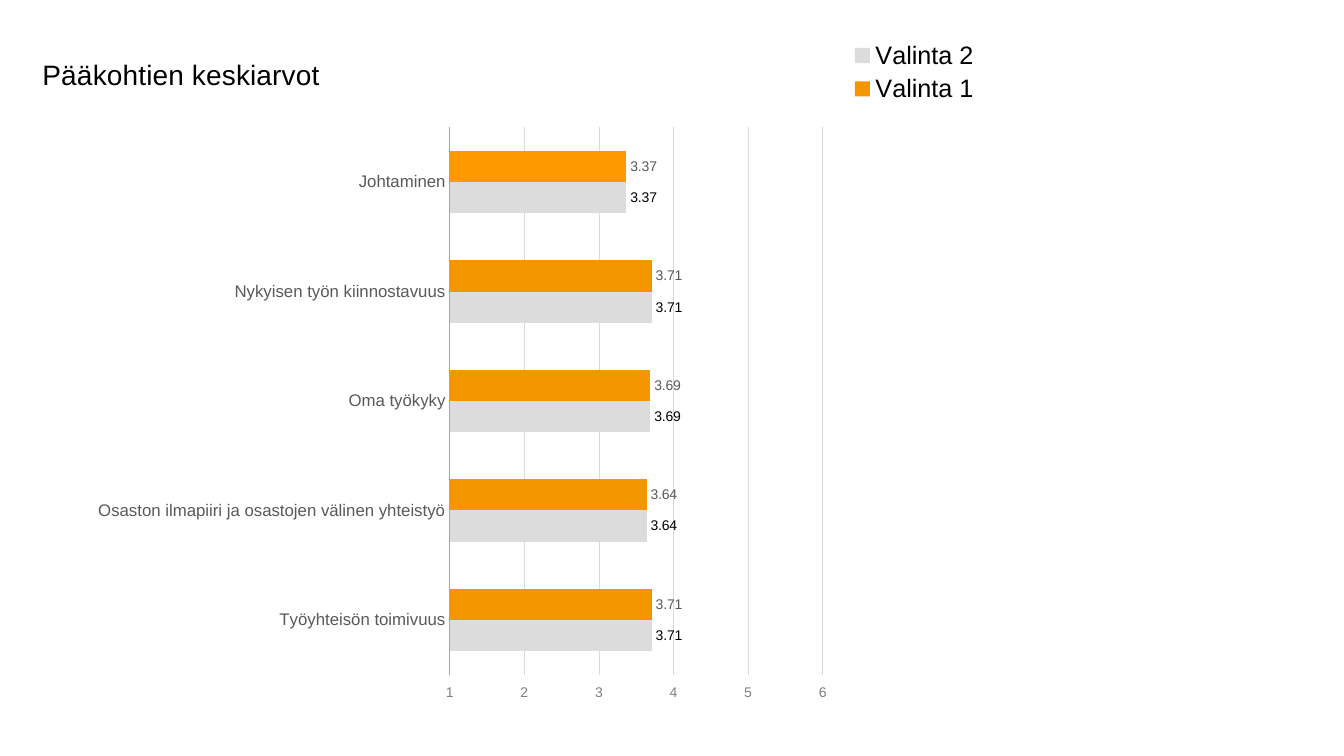
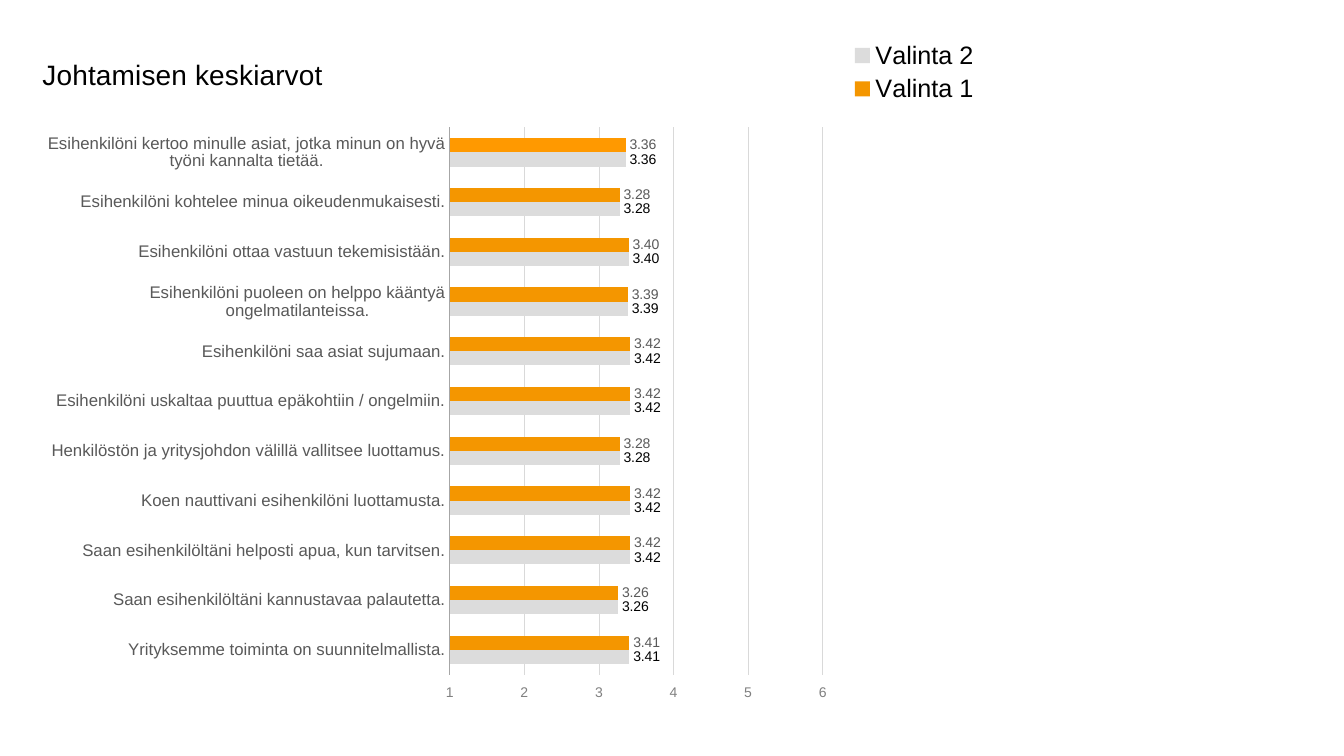
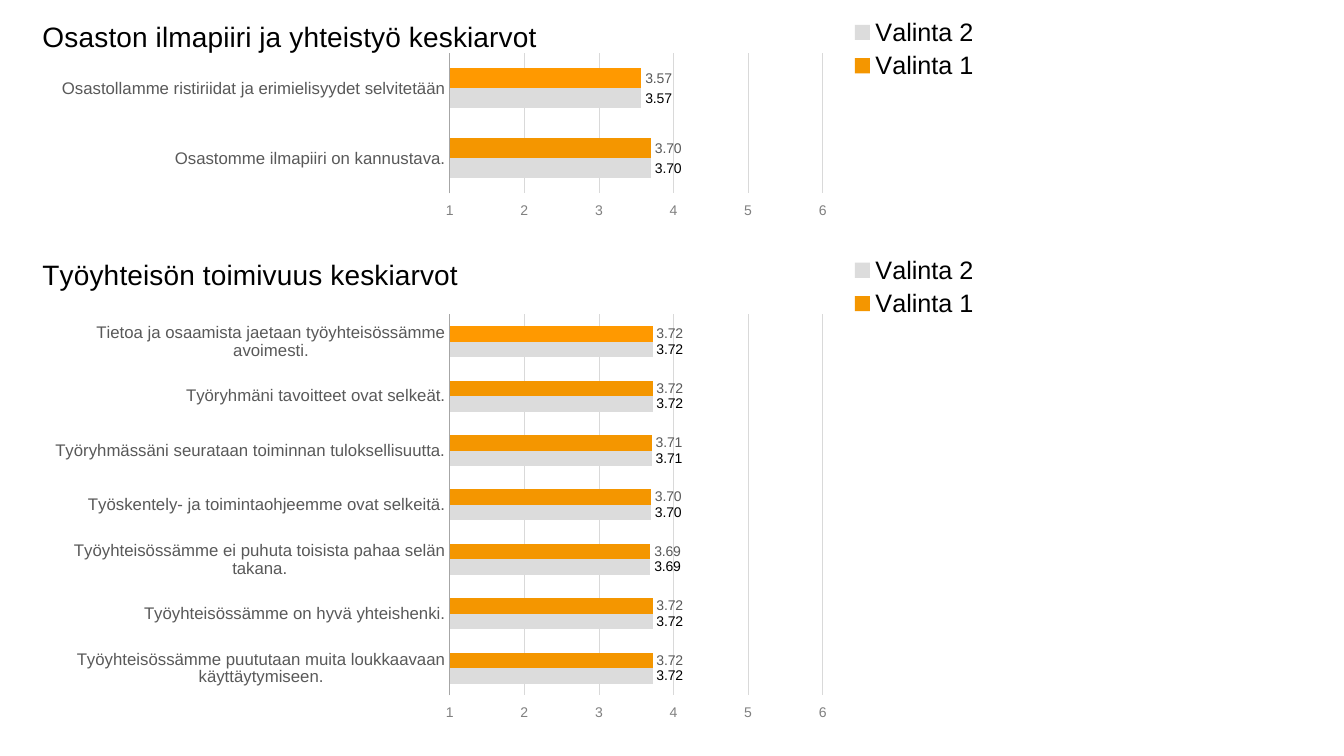
"""Builds three slides of bar charts that compare survey averages."""
import pptx
import pptx.chart.data
import pptx.dml.color
import pptx.enum.chart
import pptx.oxml
import pptx.oxml.ns
import pptx.util


def rgb(value):
    return pptx.dml.color.RGBColor.from_string(value)


def apply(target, values):
    for name, value in values.items():
        setattr(target, name, value)


class Deck:
    CELL = 0.1
    LEFT, WIDTH = 2.1, 95.3
    PLOT_LEFT, PLOT_WIDTH = 42.5, 37
    TITLE_LEFT = 1.6
    SERIES = (("Valinta 1", "F49600", "595959", "#,##0.00"),
              ("Valinta 2", "DCDCDC", "000000", "0.00"))
    FIRST_BAR = "FF9900"

    def __init__(self):
        self.prs = pptx.Presentation()
        apply(self.prs, {"slide_width": pptx.util.Inches(13.33),
                         "slide_height": pptx.util.Inches(7.5)})
        self.s = None

    def slide(self):
        self.s = self.prs.slides.add_slide(self.prs.slide_layouts[6])

    def font(self, font, size, color="000000", name="Arial"):
        apply(font, {"size": pptx.util.Pt(size), "name": name, "bold": False})
        font.color.rgb = rgb(color)

    def line(self, line, color, width):
        line.color.rgb = rgb(color)
        line.width = pptx.util.Pt(width)

    def layout(self, parent, index, **shares):
        for old in parent.findall(pptx.oxml.ns.qn("c:layout")):
            parent.remove(old)
        modes = '<c:xMode val="edge"/><c:yMode val="edge"/>'
        target = '<c:layoutTarget val="inner"/>' if "w" in shares else ""
        sizes = "".join(f'<c:{k} val="{v:.4f}"/>' for k, v in shares.items())
        parent.insert(index, pptx.oxml.parse_xml(
            f'<c:layout {pptx.oxml.ns.nsdecls("c")}><c:manualLayout>'
            f'{target}{modes}{sizes}</c:manualLayout></c:layout>'))

    def title(self, chart, text, top, height):
        chart.has_title = True
        p = chart.chart_title.text_frame.paragraphs[0]
        r = p.add_run()
        r.text = text
        self.font(r.font, 20)
        self.layout(chart.chart_title._element, 1,
                    x=self.TITLE_LEFT / self.WIDTH, y=top / height)

    def legend(self, chart):
        chart.has_legend = True
        apply(chart.legend, {
            "position": pptx.enum.chart.XL_LEGEND_POSITION.CORNER,
            "include_in_layout": False})
        self.font(chart.legend.font, 18)

    def axes(self, chart):
        none = pptx.enum.chart.XL_TICK_MARK.NONE
        cat, val = chart.category_axis, chart.value_axis
        for axis, size, color in ((cat, 12, "595959"), (val, 10, "808080")):
            apply(axis, {"major_tick_mark": none, "minor_tick_mark": none})
            self.font(axis.tick_labels.font, size, color)
        cat.reverse_order = True
        self.line(cat.format.line, "A6A6A6", 0.75)
        apply(val, {
            "minimum_scale": 1, "maximum_scale": 6, "major_unit": 1,
            "has_major_gridlines": True,
            "tick_label_position":
                pptx.enum.chart.XL_TICK_LABEL_POSITION.HIGH})
        apply(val.tick_labels, {"number_format": "General",
                                "number_format_is_linked": False})
        val.format.line.fill.background()
        self.line(val.major_gridlines.format.line, "D9D9D9", 0.25)

    def fill(self, part, color):
        part.format.fill.solid()
        part.format.fill.fore_color.rgb = rgb(color)

    def bars(self, chart):
        plot = chart.plots[0]
        apply(plot, {"gap_width": 150, "overlap": 0,
                     "vary_by_categories": False})
        for ser, (_, color, text, fmt) in zip(plot.series, self.SERIES):
            ser.invert_if_negative = False
            self.fill(ser, color)
            apply(ser.data_labels, {
                "show_value": True, "number_format": fmt,
                "number_format_is_linked": False,
                "position": pptx.enum.chart.XL_LABEL_POSITION.OUTSIDE_END})
            self.font(ser.data_labels.font, 10, text)
        self.fill(plot.series[0].points[0], self.FIRST_BAR)

    def chart(self, title, averages, top, height, title_top, plot_top,
              plot_height):
        data = pptx.chart.data.CategoryChartData()
        data.categories = list(averages)
        for name, *_ in self.SERIES:
            data.add_series(name, list(averages.values()))
        box = [pptx.util.Inches(n * self.CELL)
               for n in (self.LEFT, top, self.WIDTH, height)]
        chart = self.s.shapes.add_chart(
            pptx.enum.chart.XL_CHART_TYPE.BAR_CLUSTERED, *box, data).chart
        self.font(chart.font, 18, name="Lato")
        self.title(chart, title, title_top, height)
        self.legend(chart)
        self.axes(chart)
        self.bars(chart)
        area = chart._chartSpace.find(".//" + pptx.oxml.ns.qn("c:plotArea"))
        self.layout(area, 0, x=self.PLOT_LEFT / self.WIDTH,
                    y=plot_top / height, w=self.PLOT_WIDTH / self.WIDTH,
                    h=plot_height / height)


MAIN = {
    "Johtaminen": 3.37,
    "Nykyisen työn kiinnostavuus": 3.71,
    "Oma työkyky": 3.69,
    "Osaston ilmapiiri ja osastojen välinen yhteistyö": 3.64,
    "Työyhteisön toimivuus": 3.71,
}
LEADERSHIP = {
    "Esihenkilöni kertoo minulle asiat, jotka minun on hyvä työni kannalta "
    "tietää.": 3.36,
    "Esihenkilöni kohtelee minua oikeudenmukaisesti.": 3.28,
    "Esihenkilöni ottaa vastuun tekemisistään.": 3.4,
    "Esihenkilöni puoleen on helppo kääntyä ongelmatilanteissa.": 3.39,
    "Esihenkilöni saa asiat sujumaan.": 3.42,
    "Esihenkilöni uskaltaa puuttua epäkohtiin / ongelmiin.": 3.42,
    "Henkilöstön ja yritysjohdon välillä vallitsee luottamus.": 3.28,
    "Koen nauttivani esihenkilöni luottamusta.": 3.42,
    "Saan esihenkilöltäni helposti apua, kun tarvitsen.": 3.42,
    "Saan esihenkilöltäni kannustavaa palautetta.": 3.26,
    "Yrityksemme toiminta on suunnitelmallista.": 3.41,
}
DEPARTMENT = {
    "Osastollamme ristiriidat ja erimielisyydet selvitetään": 3.57,
    "Osastomme ilmapiiri on kannustava.": 3.7,
}
COMMUNITY = {
    "Tietoa ja osaamista jaetaan työyhteisössämme avoimesti.": 3.72,
    "Työryhmäni tavoitteet ovat selkeät.": 3.72,
    "Työryhmässäni seurataan toiminnan tuloksellisuutta.": 3.71,
    "Työskentely- ja toimintaohjeemme ovat selkeitä.": 3.7,
    "Työyhteisössämme ei puhuta toisista pahaa selän takana.": 3.69,
    "Työyhteisössämme on hyvä yhteishenki.": 3.72,
    "Työyhteisössämme puututaan muita loukkaavaan käyttäytymiseen.": 3.72,
}
FULL = {"top": 3.6, "height": 70.1, "title_top": 1.6, "plot_top": 9.05,
        "plot_height": 54.3}
UPPER = {"top": 1.3, "height": 20.5, "title_top": 0.05, "plot_top": 4,
         "plot_height": 13.9}
LOWER = {"top": 24.9, "height": 48.8, "title_top": 0.05, "plot_top": 6.3,
         "plot_height": 37.8}
SLIDES = (
    (("Pääkohtien keskiarvot", MAIN, FULL),),
    (("Johtamisen keskiarvot", LEADERSHIP, FULL),),
    (("Osaston ilmapiiri ja yhteistyö keskiarvot", DEPARTMENT, UPPER),
     ("Työyhteisön toimivuus keskiarvot", COMMUNITY, LOWER)),
)


def main():
    deck = Deck()
    for charts in SLIDES:
        deck.slide()
        for title, averages, place in charts:
            deck.chart(title, averages, **place)
    deck.prs.save("out.pptx")


if __name__ == "__main__":
    main()
